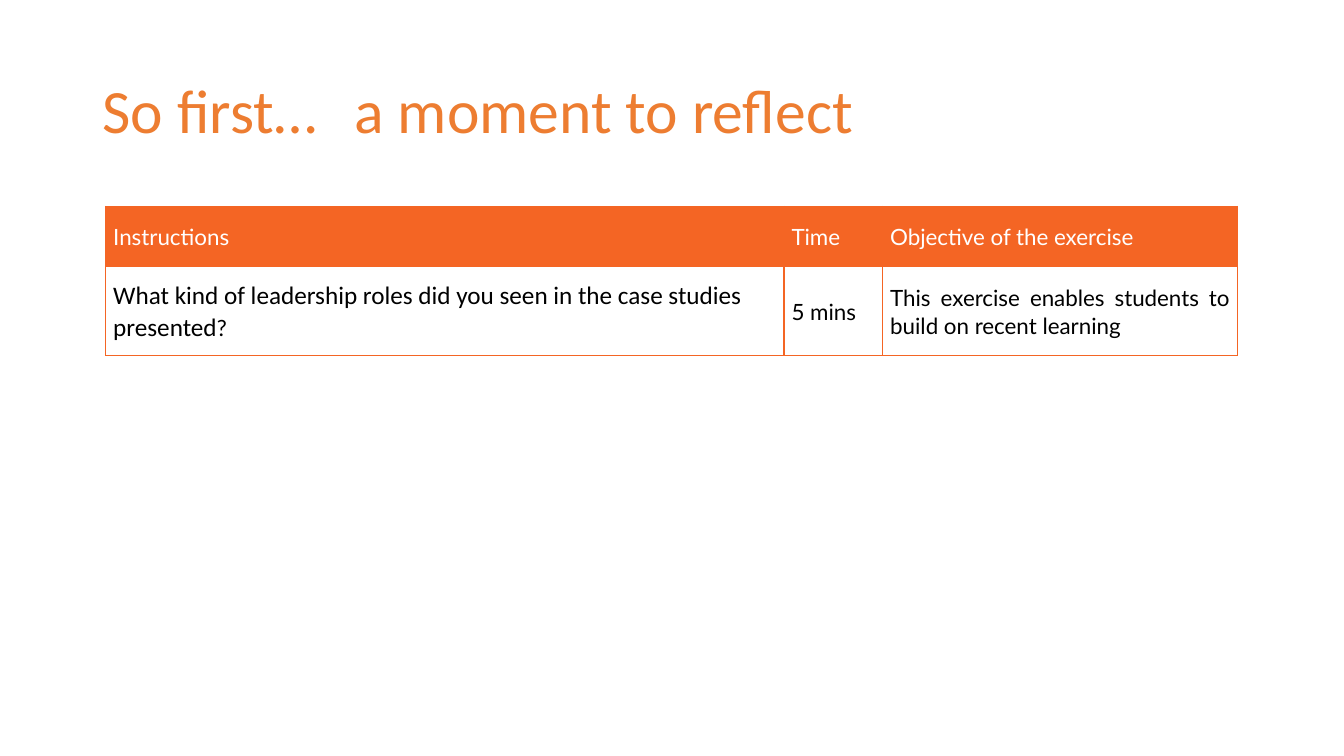
from lxml import etree
from pptx import Presentation
from pptx.dml.color import RGBColor
from pptx.enum.text import MSO_ANCHOR, PP_ALIGN
from pptx.oxml.ns import qn
from pptx.util import Pt

MIDDLE = MSO_ANCHOR.MIDDLE
LEFT = PP_ALIGN.LEFT
JUSTIFY = PP_ALIGN.JUSTIFY
AMBER = RGBColor(0xED, 0x7D, 0x31)
ORANGE = RGBColor(0xF4, 0x65, 0x24)
WHITE = RGBColor(0xFF, 0xFF, 0xFF)
BLACK = RGBColor(0, 0, 0)

WIDTHS = [484.5, 70.5, 253.5]
HEIGHTS = [42.5, 64]
ROWS = [
    ["Instructions", "Time", "Objective of the exercise"],
    [
        "What kind of leadership roles did you seen in the case studies presented",
        "5 mins",
        "This exercise enables students to build on recent learning",
    ],
]


def style(font, name, size, color):
    font.name = name
    font.size = Pt(size)
    font.bold = False
    font.color.rgb = color


def add_title(slide, left, top, width, height):
    title = slide.shapes.title
    title.left, title.top = Pt(left), Pt(top)
    title.width, title.height = Pt(width), Pt(height)
    frame = title.text_frame
    frame.text = "So first…\ta moment to reflect"
    frame.vertical_anchor = MIDDLE
    para = frame.paragraphs[0]
    para.alignment = LEFT
    para.line_spacing = 0.9
    style(para.font, "Calibri", 44, AMBER)


def add_border(cell):
    props = cell._tc.get_or_add_tcPr()
    for side in ("lnL", "lnR", "lnT", "lnB"):
        line = etree.SubElement(props, qn(f"a:{side}"), w=str(Pt(1)))
        fill = etree.SubElement(line, qn("a:solidFill"))
        etree.SubElement(fill, qn("a:srgbClr"), val=str(ORANGE))


def fill_cell(cell, text, header, align):
    add_border(cell)
    cell.margin_left = cell.margin_right = Pt(5.4)
    cell.margin_top = cell.margin_bottom = 0
    cell.vertical_anchor = MIDDLE
    if header:
        cell.fill.solid()
        cell.fill.fore_color.rgb = ORANGE
    else:
        cell.fill.background()
    cell.text = text
    para = cell.text_frame.paragraphs[0]
    para.alignment = align
    para.line_spacing = 1.07
    style(para.font, "Lato", 16, WHITE if header else BLACK)


def add_grid(slide, left, top):
    frame = slide.shapes.add_table(
        len(ROWS), len(WIDTHS), Pt(left), Pt(top), Pt(sum(WIDTHS)), Pt(sum(HEIGHTS))
    )
    table = frame.table
    table.horz_banding = False
    for column, width in zip(table.columns, WIDTHS):
        column.width = Pt(width)
    for row, height in zip(table.rows, HEIGHTS):
        row.height = Pt(height)
    for i, texts in enumerate(ROWS):
        for j, text in enumerate(texts):
            align = JUSTIFY if i and j else LEFT
            fill_cell(table.cell(i, j), text, i == 0, align)
    para = table.cell(1, 0).text_frame.paragraphs[0]
    style(para.runs[0].font, "Calibri", 18, BLACK)
    mark = para.add_run()
    mark.text = "?"
    style(mark.font, "Lato", 16, BLACK)


def main():
    deck = Presentation()
    deck.slide_width, deck.slide_height = Pt(960), Pt(540)
    slide = deck.slides.add_slide(deck.slide_layouts[5])
    add_title(slide, 66, 28.75, 828, 104.4)
    add_grid(slide, 75.5, 147.5)
    deck.save("out.pptx")


if __name__ == "__main__":
    main()
